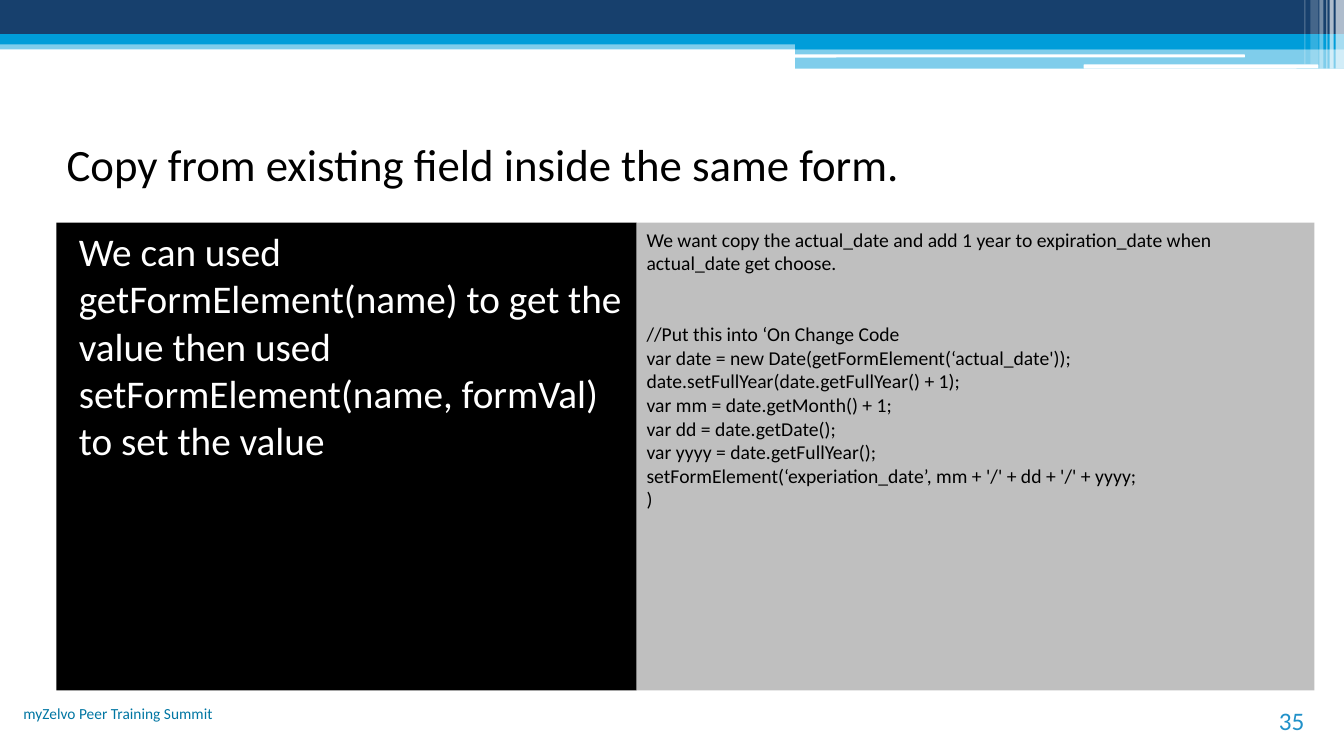
"""Build the slide on copying a value between fields of the same form."""
from dataclasses import dataclass
from typing import Optional

import lxml.etree
import pptx
import pptx.dml.color
import pptx.enum.shapes
import pptx.enum.text
import pptx.oxml.ns
import pptx.shapes.autoshape
import pptx.slide
import pptx.text.text
import pptx.util

Pt = pptx.util.Pt
RGBColor = pptx.dml.color.RGBColor
Shapes = pptx.enum.shapes.MSO_SHAPE
Align = pptx.enum.text.PP_ALIGN
Anchor = pptx.enum.text.MSO_ANCHOR

FONT = "Calibri"
WHITE = RGBColor(0xFF, 0xFF, 0xFF)
BLACK = RGBColor(0x00, 0x00, 0x00)
GRAY = RGBColor(0xBF, 0xBF, 0xBF)
NAVY = RGBColor(0x17, 0x40, 0x6D)
CYAN = RGBColor(0x00, 0x9D, 0xD9)
FOOTER_BLUE = RGBColor(0x00, 0x76, 0xA3)
NUMBER_BLUE = RGBColor(0x21, 0x91, 0xC9)

WIDTH, HEIGHT = 960, 540
SPLIT = 568
CONTENT_LEFT = 40.3
PANEL_TOP, PANEL_HEIGHT = 159.1, 334.1
PANEL_SPLIT = 454.8
PANEL_RIGHT = 938.9
CODE_GAP = 34


@dataclass(frozen=True)
class Box:
    left: float
    top: float
    width: float
    height: float


@dataclass(frozen=True)
class Bar:
    box: Box
    color: RGBColor
    opacity: int = 100
    rounded: bool = False


@dataclass(frozen=True)
class Line:
    text: str
    space_before: float = 0


@dataclass(frozen=True)
class TextBlock:
    box: Box
    lines: tuple[Line, ...]
    size: float
    color: RGBColor
    fill: Optional[RGBColor] = None
    align: Align = Align.LEFT
    anchor: Anchor = Anchor.TOP
    left_inset: float = 7.2


BARS = (
    Bar(Box(0, 28.8, WIDTH, 6.5), CYAN, 50),
    Bar(Box(0, 0, WIDTH, 24.5), NAVY),
    Bar(Box(0, 24.5, WIDTH, 7.2), CYAN),
    Bar(Box(SPLIT, 28.1, WIDTH - SPLIT, 7.2), CYAN),
    Bar(Box(SPLIT, 34.6, WIDTH - SPLIT, 14.4), CYAN, 50),
    Bar(Box(567.4, 38.9, 321.8, 2.2), WHITE, rounded=True),
    Bar(Box(774, 46.1, 167.8, 2.9), WHITE, rounded=True),
    Bar(Box(954, 0, 6, 49), WHITE, 65),
    Bar(Box(949.7, 0, 2.9, 49), WHITE, 65),
    Bar(Box(947.5, 0, 0.7, 49), WHITE, 60),
    Bar(Box(942.5, 0, 2.9, 49), WHITE, 40),
    Bar(Box(936, 0, 5.8, 46.1), WHITE, 20),
    Bar(Box(931.7, 0, 0.7, 46.1), WHITE, 30),
)

TITLE = TextBlock(
    Box(CONTENT_LEFT, 74.9, 851.8, 84.2),
    (Line("Copy from existing field inside the same form."),),
    32, BLACK, anchor=Anchor.MIDDLE,
)

BLOCKS = (
    TextBlock(
        Box(CONTENT_LEFT, PANEL_TOP, PANEL_SPLIT - CONTENT_LEFT, PANEL_HEIGHT),
        (Line("We can used getFormElement(name) to get the value then used "
              "setFormElement(name, formVal) to set the value"),),
        28, WHITE, fill=BLACK, left_inset=16,
    ),
    TextBlock(
        Box(0, 499.7, 159.1, 36),
        (Line("myZelvo Peer Training Summit"),),
        11, FOOTER_BLUE, align=Align.RIGHT,
    ),
    TextBlock(
        Box(859, 500.4, 79.9, 28.8), (Line("35"),),
        18, NUMBER_BLUE, align=Align.RIGHT, anchor=Anchor.BOTTOM,
    ),
    TextBlock(
        Box(PANEL_SPLIT, PANEL_TOP, PANEL_RIGHT - PANEL_SPLIT, PANEL_HEIGHT),
        (
            Line("We want copy the actual_date and add 1 year to "
                 "expiration_date when actual_date get choose."),
            Line("//Put this into ‘On Change Code", CODE_GAP),
            Line("var date = new Date(getFormElement(‘actual_date'));"),
            Line("date.setFullYear(date.getFullYear() + 1);"),
            Line("var mm = date.getMonth() + 1;"),
            Line("var dd = date.getDate();"),
            Line("var yyyy = date.getFullYear();"),
            Line("setFormElement(‘experiation_date’, mm + '/' + dd + '/' + yyyy;"),
            Line(")"),
        ),
        14, BLACK, fill=GRAY,
    ),
)


def add_bar(
    slide: pptx.slide.Slide, box: Box, color: RGBColor,
    opacity: int = 100, rounded: bool = False,
) -> pptx.shapes.autoshape.Shape:
    kind = Shapes.ROUNDED_RECTANGLE if rounded else Shapes.RECTANGLE
    shape = slide.shapes.add_shape(
        kind, Pt(box.left), Pt(box.top), Pt(box.width), Pt(box.height))
    shape.shadow.inherit = False
    shape.line.fill.background()
    shape.fill.solid()
    shape.fill.fore_color.rgb = color
    if opacity < 100:
        qn = pptx.oxml.ns.qn
        color_element = shape.fill._xPr.find(qn("a:solidFill")).find(qn("a:srgbClr"))
        alpha = lxml.etree.SubElement(color_element, qn("a:alpha"))
        alpha.set("val", str(opacity * 1000))
    return shape


def write_text(frame: pptx.text.text.TextFrame, block: TextBlock) -> None:
    frame.word_wrap = True
    frame.auto_size = pptx.enum.text.MSO_AUTO_SIZE.NONE
    frame.vertical_anchor = block.anchor
    frame.margin_left, frame.margin_right = Pt(block.left_inset), Pt(7.2)
    frame.margin_top = frame.margin_bottom = Pt(3.6)
    for index, line in enumerate(block.lines):
        paragraph = frame.add_paragraph() if index else frame.paragraphs[0]
        paragraph.alignment = block.align
        paragraph.space_before = Pt(line.space_before)
        run = paragraph.add_run()
        run.text = line.text
        run.font.name = FONT
        run.font.size = Pt(block.size)
        run.font.color.rgb = block.color


def add_block(slide: pptx.slide.Slide, block: TextBlock) -> None:
    box = block.box
    if block.fill is not None:
        shape = add_bar(slide, box, block.fill)
    else:
        shape = slide.shapes.add_textbox(
            Pt(box.left), Pt(box.top), Pt(box.width), Pt(box.height))
    write_text(shape.text_frame, block)


def place_title(slide: pptx.slide.Slide, block: TextBlock) -> None:
    title = slide.shapes.title
    title.left, title.top = Pt(block.box.left), Pt(block.box.top)
    title.width, title.height = Pt(block.box.width), Pt(block.box.height)
    write_text(title.text_frame, block)


def main() -> None:
    presentation = pptx.Presentation()
    presentation.slide_width, presentation.slide_height = Pt(WIDTH), Pt(HEIGHT)
    slide = presentation.slides.add_slide(presentation.slide_layouts[5])
    for bar in BARS:
        add_bar(slide, bar.box, bar.color, bar.opacity, bar.rounded)
    place_title(slide, TITLE)
    for block in BLOCKS:
        add_block(slide, block)
    presentation.save("out.pptx")


if __name__ == "__main__":
    main()
